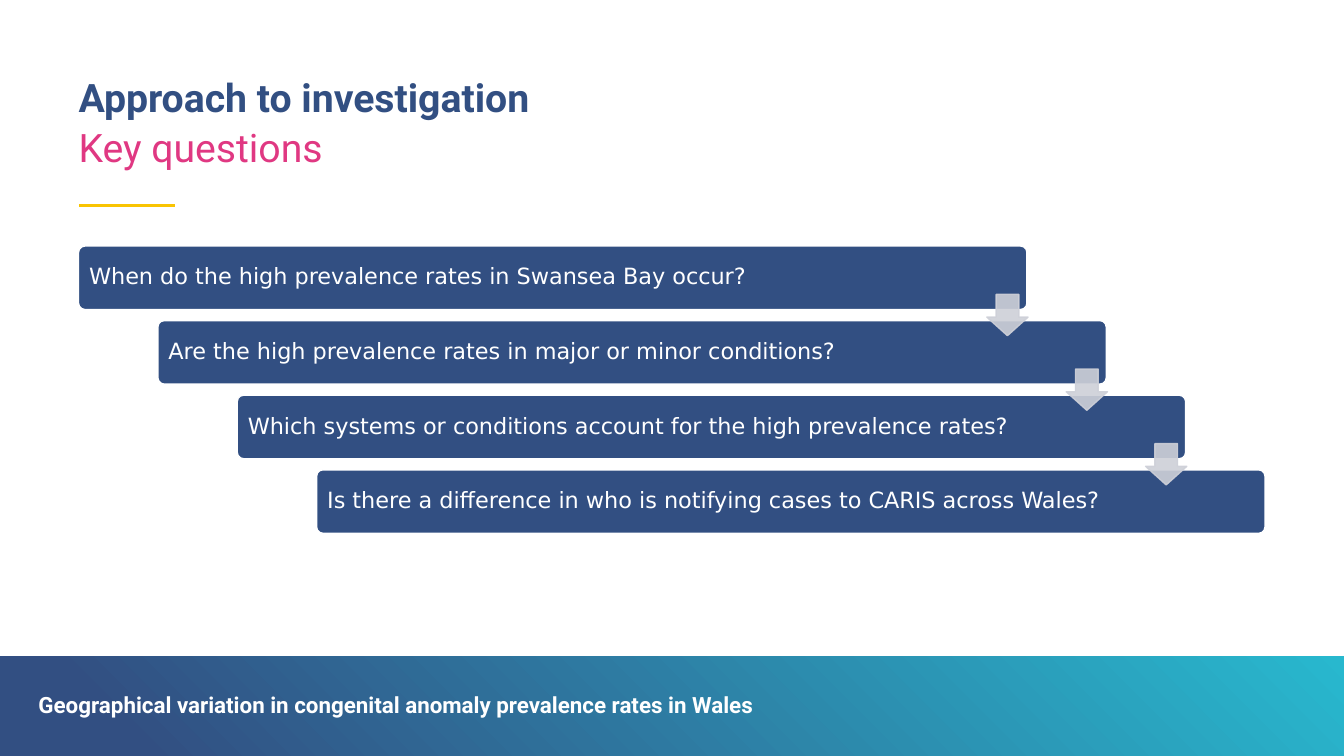
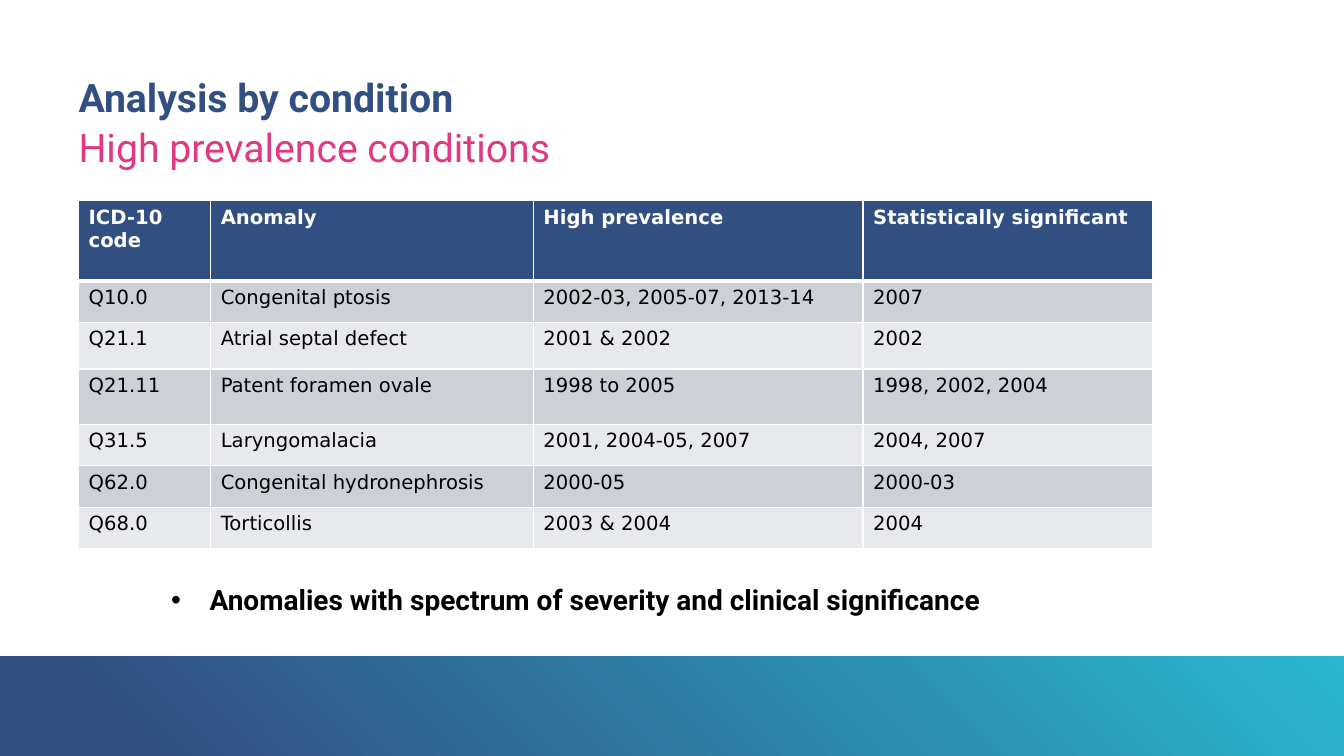
from dataclasses import dataclass
from typing import Any

from lxml import etree
from pptx import Presentation
from pptx import util as u
from pptx.dml.color import RGBColor
from pptx.enum import shapes, text
from pptx.oxml import ns

Cm, Pt = u.Cm, u.Pt
KIND = shapes.MSO_SHAPE


@dataclass(frozen=True)
class Theme:
    navy: str = "324F82"
    pink: str = "E03882"
    teal: str = "28B8CE"
    gold: str = "F9C402"
    grey: str = "CED0D8"
    pale: str = "E8E9ED"
    white: str = "FFFFFF"
    black: str = "000000"
    head: str = "Roboto"
    body: str = "DejaVu Sans"
    title: int = 28
    list: int = 20
    text: int = 16
    cell: int = 14


@dataclass(frozen=True)
class Box:
    """Place and size in centimetres."""
    x: float
    y: float
    w: float
    h: float

    def dims(self) -> tuple:
        return Cm(self.x), Cm(self.y), Cm(self.w), Cm(self.h)


@dataclass(frozen=True)
class Style:
    size: int
    color: str
    font: str
    bold: bool = False


T = Theme()
TITLE = Style(T.title, T.navy, T.head, True)
SUB = Style(T.title, T.pink, T.head)
FOOT = Style(T.text, T.white, T.head, True)
POINT = Style(T.list, T.black, T.head, True)
STEP = Style(T.text, T.white, T.body)
HEAD = Style(T.cell, T.white, T.body, True)
CELL = Style(T.cell, T.black, T.body)

WIDTH, HEIGHT = 33.87, 19.05
LEFT = 1.98

STEPS = (
    "When do the high prevalence rates in Swansea Bay occur?",
    "Are the high prevalence rates in major or minor conditions?",
    "Which systems or conditions account for the high prevalence rates?",
    "Is there a difference in who is notifying cases to CARIS across Wales?",
)
COLS = (3.33, 8.13, 8.31, 7.29)
ROWS = (2.03, 1.04, 1.17, 1.4, 1.04, 1.04, 1.04)
DATA = (
    ("ICD-10 code", "Anomaly", "High prevalence", "Statistically significant"),
    ("Q10.0", "Congenital ptosis", "2002-03, 2005-07, 2013-14", "2007"),
    ("Q21.1", "Atrial septal defect", "2001 & 2002", "2002"),
    ("Q21.11", "Patent foramen ovale", "1998 to 2005", "1998, 2002, 2004"),
    ("Q31.5", "Laryngomalacia", "2001, 2004-05, 2007", "2004, 2007"),
    ("Q62.0", "Congenital hydronephrosis", "2000-05", "2000-03"),
    ("Q68.0", "Torticollis", "2003 & 2004", "2004"),
)


# Helpers
def rgb(code: str) -> RGBColor:
    return RGBColor.from_string(code)


def sub(node: Any, tag: str, **attrs: Any) -> Any:
    return etree.SubElement(node, ns.qn(tag), {k: str(v) for k, v in attrs.items()})


def write(para: Any, words: str, style: Style) -> None:
    run = para.add_run()
    run.text = words
    font = run.font
    font.size, font.name, font.bold = Pt(style.size), style.font, style.bold
    font.color.rgb = rgb(style.color)


def inset(frame: Any, side: float, edge: float) -> None:
    frame.margin_left = frame.margin_right = Cm(side)
    frame.margin_top = frame.margin_bottom = Cm(edge)


def fill_ph(ph: Any, box: Box, words: str, style: Style, bullet: bool = False) -> None:
    """Move a placeholder and give it one formatted line."""
    ph.left, ph.top, ph.width, ph.height = box.dims()
    frame = ph.text_frame
    frame.word_wrap = True
    frame.auto_size = text.MSO_AUTO_SIZE.NONE
    frame.vertical_anchor = text.MSO_ANCHOR.TOP
    para = frame.paragraphs[0]
    props = para._p.get_or_add_pPr()
    hang = Cm(0.97) if bullet else 0
    props.set("marL", str(hang))
    props.set("indent", str(-hang))
    if bullet:
        inset(frame, 0.25, 0.13)
        sub(props, "a:buFont", typeface="Arial")
        sub(props, "a:buChar", char="•")
    else:
        inset(frame, 0, 0)
        sub(props, "a:buNone")
    para.alignment = text.PP_ALIGN.LEFT
    para.line_spacing = 1.0 if bullet else 0.9
    para.space_before = Pt(0)
    write(para, words, style)


def shape(slide: Any, kind: Any, box: Box, color: str, edge: str) -> Any:
    item = slide.shapes.add_shape(kind, *box.dims())
    item.shadow.inherit = False
    item.fill.solid()
    item.fill.fore_color.rgb = rgb(color)
    item.line.color.rgb = rgb(edge)
    item.line.width = Pt(1)
    return item


# Shared parts: band and rule live on the layout
def decor(layout: Any, slide: Any) -> None:
    band = shape(slide, KIND.RECTANGLE, Box(0, 16.54, WIDTH, 2.51), T.navy, T.navy)
    band.line.fill.background()
    band.fill.gradient()
    band.fill.gradient_angle = 45
    for stop, (pos, color) in zip(band.fill.gradient_stops,
                                  ((0.1, T.navy), (1, T.teal))):
        stop.position = pos
        stop.color.rgb = rgb(color)

    rule = slide.shapes.add_connector(
        shapes.MSO_CONNECTOR.STRAIGHT, Cm(2), Cm(5.18), Cm(4.4), Cm(5.18))
    rule.line.color.rgb = rgb(T.gold)
    rule.line.width = Pt(2.25)
    sub(rule.element.spPr, "a:effectLst")

    for num, item in enumerate((band, rule), 20):
        item.element.xpath(".//p:cNvPr")[0].set("id", str(num))
        layout.shapes.element.append(item.element)


def heads(slide: Any, title: str, under: str) -> None:
    fill_ph(slide.shapes.title, Box(LEFT, 1.98, 29.9, 1.09), title, TITLE)
    fill_ph(slide.placeholders[1], Box(LEFT, 3.23, 29.9, 1.09), under, SUB)


# Stepped questions
def stairs(slide: Any) -> None:
    dx, dy = 2.0, 1.88
    for i, words in enumerate(STEPS):
        bar = shape(slide, KIND.ROUNDED_RECTANGLE,
                    Box(LEFT + i * dx, 6.2 + i * dy, 23.9, 1.6), T.navy, T.white)
        bar.adjustments[0] = 0.1
        frame = bar.text_frame
        frame.word_wrap = True
        frame.vertical_anchor = text.MSO_ANCHOR.MIDDLE
        inset(frame, 0.22, 0.18)
        para = frame.paragraphs[0]
        para.alignment = text.PP_ALIGN.LEFT
        para.line_spacing = 0.9
        write(para, words, STEP)

    for i in range(len(STEPS) - 1):
        arrow = shape(slide, KIND.DOWN_ARROW,
                      Box(24.87 + i * dx, 7.42 + i * dy, 1.04, 1.04), T.grey, T.grey)
        arrow.adjustments[0], arrow.adjustments[1] = 0.55, 0.45
        for color in arrow.element.spPr.iter(ns.qn("a:srgbClr")):
            sub(color, "a:alpha", val=90000)


# Table of conditions
def border(cell: Any, row: int) -> None:
    props = cell._tc.get_or_add_tcPr()
    thick = {"T": row == 1, "B": row == 0}
    for side in "LRTB":
        line = sub(props, f"a:ln{side}", w=Pt(3 if thick.get(side) else 1))
        sub(sub(line, "a:solidFill"), "a:srgbClr", val=T.white)


def grid(slide: Any) -> None:
    box = Box(LEFT, 5.06, sum(COLS), sum(ROWS))
    table = slide.shapes.add_table(len(ROWS), len(COLS), *box.dims()).table
    for col, wide in zip(table.columns, COLS):
        col.width = Cm(wide)
    for r, (row, high) in enumerate(zip(table.rows, ROWS)):
        row.height = Cm(high)
        tint = T.navy if r == 0 else (T.pale, T.grey)[r % 2]
        for cell, words in zip(row.cells, DATA[r]):
            border(cell, r)
            cell.fill.solid()
            cell.fill.fore_color.rgb = rgb(tint)
            write(cell.text_frame.paragraphs[0], words, CELL if r else HEAD)


def main() -> None:
    deck = Presentation()
    deck.slide_width, deck.slide_height = Cm(WIDTH), Cm(HEIGHT)
    layout = deck.slide_layouts[3]

    # Key questions
    first = deck.slides.add_slide(layout)
    decor(layout, first)
    heads(first, "Approach to investigation", "Key questions")
    fill_ph(first.placeholders[2], Box(0.97, 17.48, 20.9, 0.61),
            "Geographical variation in congenital anomaly prevalence rates in Wales",
            FOOT)
    stairs(first)

    # High prevalence conditions
    second = deck.slides.add_slide(layout)
    heads(second, "Analysis by condition", "High prevalence conditions")
    fill_ph(second.placeholders[2], Box(4.06, 14.55, 27.03, 1.12),
            "Anomalies with spectrum of severity and clinical significance",
            POINT, bullet=True)
    grid(second)

    deck.save("out.pptx")


if __name__ == "__main__":
    main()
